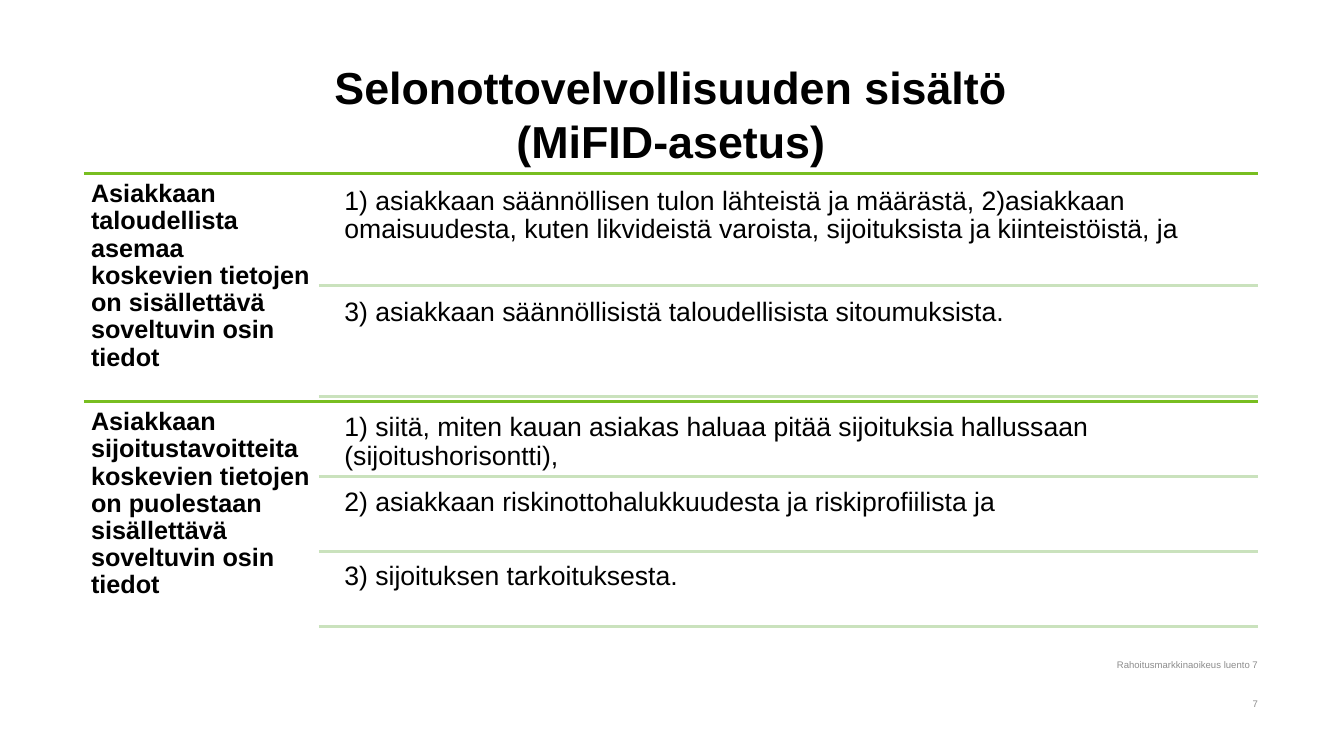
from pptx import Presentation
from pptx.dml.color import RGBColor
from pptx.enum.shapes import MSO_CONNECTOR
from pptx.enum.text import MSO_ANCHOR, PP_ALIGN
from pptx.oxml.ns import qn
from pptx.util import Inches, Pt
from lxml import etree

STRAIGHT = MSO_CONNECTOR.STRAIGHT
TOP, MIDDLE, BOTTOM = MSO_ANCHOR.TOP, MSO_ANCHOR.MIDDLE, MSO_ANCHOR.BOTTOM
START, CENTER, END = PP_ALIGN.LEFT, PP_ALIGN.CENTER, PP_ALIGN.RIGHT

BLACK = RGBColor(0x00, 0x00, 0x00)
GREY = RGBColor(0x8C, 0x8C, 0x8C)
GREEN = RGBColor(0x78, 0xBE, 0x20)
PALE = RGBColor(0xCA, 0xE2, 0xBD)

WIDE, HIGH = 13.33, 7.5
LEFT = WIDE / 16
SPAN = WIDE * 0.8735
RIGHT = LEFT + SPAN
LABEL = SPAN / 5
INDENT = LABEL * 0.075
FIRST = HIGH * 0.23
BLOCK = HIGH * 0.3015
GAP = 0.05

BLOCKS = [
    ("Asiakkaan taloudellista asemaa koskevien tietojen on sisällettävä "
     "soveltuvin osin tiedot",
     ["1) asiakkaan säännöllisen tulon lähteistä ja määrästä, 2)asiakkaan "
      "omaisuudesta, kuten likvideistä varoista, sijoituksista ja "
      "kiinteistöistä, ja",
      "3) asiakkaan säännöllisistä taloudellisista sitoumuksista."]),
    ("Asiakkaan sijoitustavoitteita koskevien tietojen on puolestaan "
     "sisällettävä soveltuvin osin tiedot",
     ["1) siitä, miten kauan asiakas haluaa pitää sijoituksia hallussaan "
      "(sijoitushorisontti),",
      "2) asiakkaan riskinottohalukkuudesta ja riskiprofiilista ja",
      "3) sijoituksen tarkoituksesta."]),
]


def add_text(slide, text, box, size, color=BLACK, bold=False, align=START,
             anchor=TOP, pads=(0.1, 0.05, 0.1, 0.05), lead=1.0):
    frame = slide.shapes.add_textbox(*map(Inches, box)).text_frame
    frame.word_wrap = True
    frame.vertical_anchor = anchor
    (frame.margin_left, frame.margin_top,
     frame.margin_right, frame.margin_bottom) = map(Inches, pads)
    frame.text = text
    para = frame.paragraphs[0]
    para.alignment = align
    para.line_spacing = lead
    font = para.font
    font.name = "Arial"
    font.size = Pt(size)
    font.bold = bold
    font.color.rgb = color


def add_rule(slide, left, top, color):
    ends = map(Inches, (left, top, RIGHT, top))
    rule = slide.shapes.add_connector(STRAIGHT, *ends)
    rule.line.color.rgb = color
    rule.line.width = Pt(2)
    etree.SubElement(rule._element.spPr, qn("a:effectLst"))


def add_block(slide, top, label, items):
    add_rule(slide, LEFT, top, GREEN)
    add_text(slide, label, (LEFT, top, LABEL, BLOCK), 18, bold=True,
             pads=(0.07,) * 4, lead=0.9)
    count = len(items)
    row = BLOCK / (count + (count + 1) * GAP)
    left = LEFT + LABEL
    for index, item in enumerate(items):
        start = top + row * (GAP + index * (1 + GAP))
        box = (left + INDENT, start, RIGHT - left - INDENT, row)
        add_text(slide, item, box, 19, pads=(0.08,) * 4, lead=0.9)
        add_rule(slide, left, start + row, PALE)


def add_foot(slide, text, top):
    left = WIDE * 0.54
    add_text(slide, text, (left, top, RIGHT - left, HIGH * 0.023), 6.8, GREY,
             align=END, anchor=MIDDLE, pads=(0.1, 0.05, 0, 0.05))


def main():
    deck = Presentation()
    deck.slide_width, deck.slide_height = Inches(WIDE), Inches(HIGH)
    slide = deck.slides.add_slide(deck.slide_layouts[6])
    add_text(slide, "Selonottovelvollisuuden sisältö\v(MiFID-asetus)",
             (LEFT, HIGH * 0.07, SPAN, HIGH * 0.158), 32, bold=True,
             align=CENTER, anchor=BOTTOM)
    for index, (label, items) in enumerate(BLOCKS):
        add_block(slide, FIRST + index * BLOCK, label, items)
    add_foot(slide, "Rahoitusmarkkinaoikeus luento 7", HIGH * 0.868)
    add_foot(slide, "7", HIGH * 0.919)
    deck.save("out.pptx")


if __name__ == "__main__":
    main()
